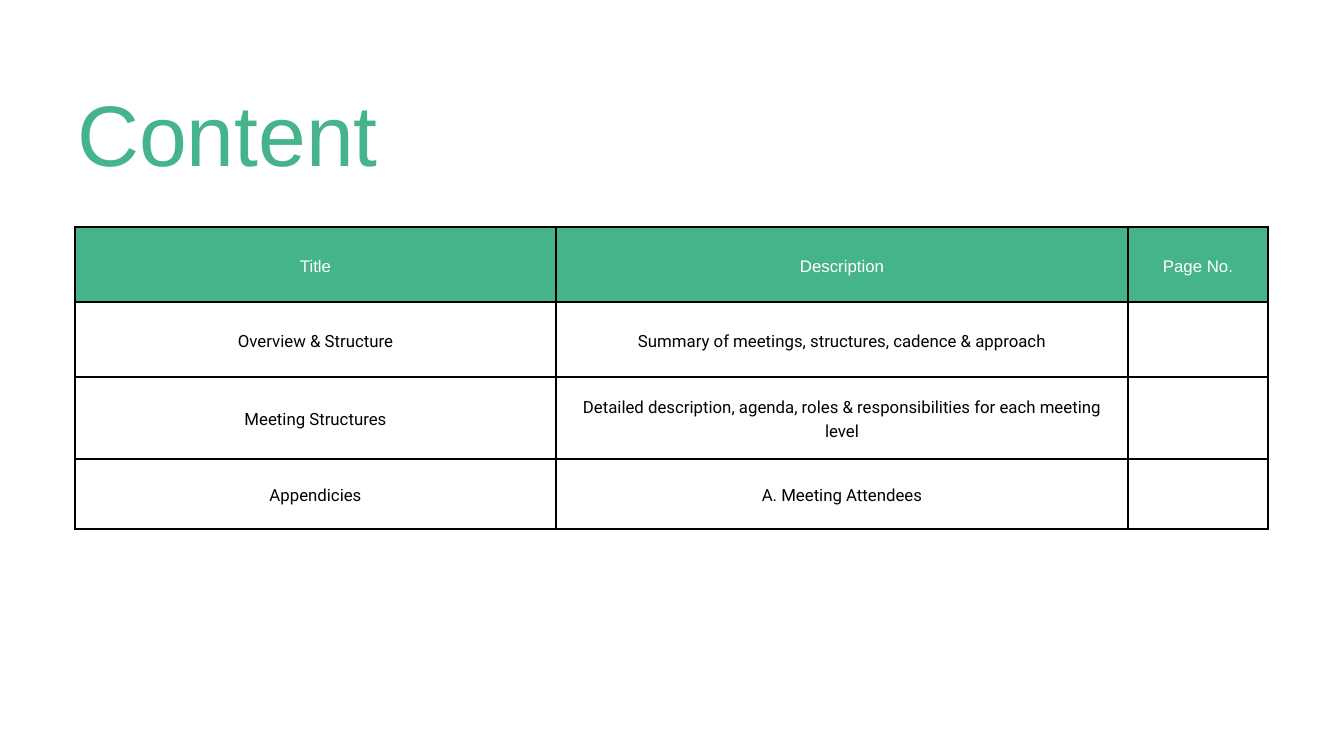
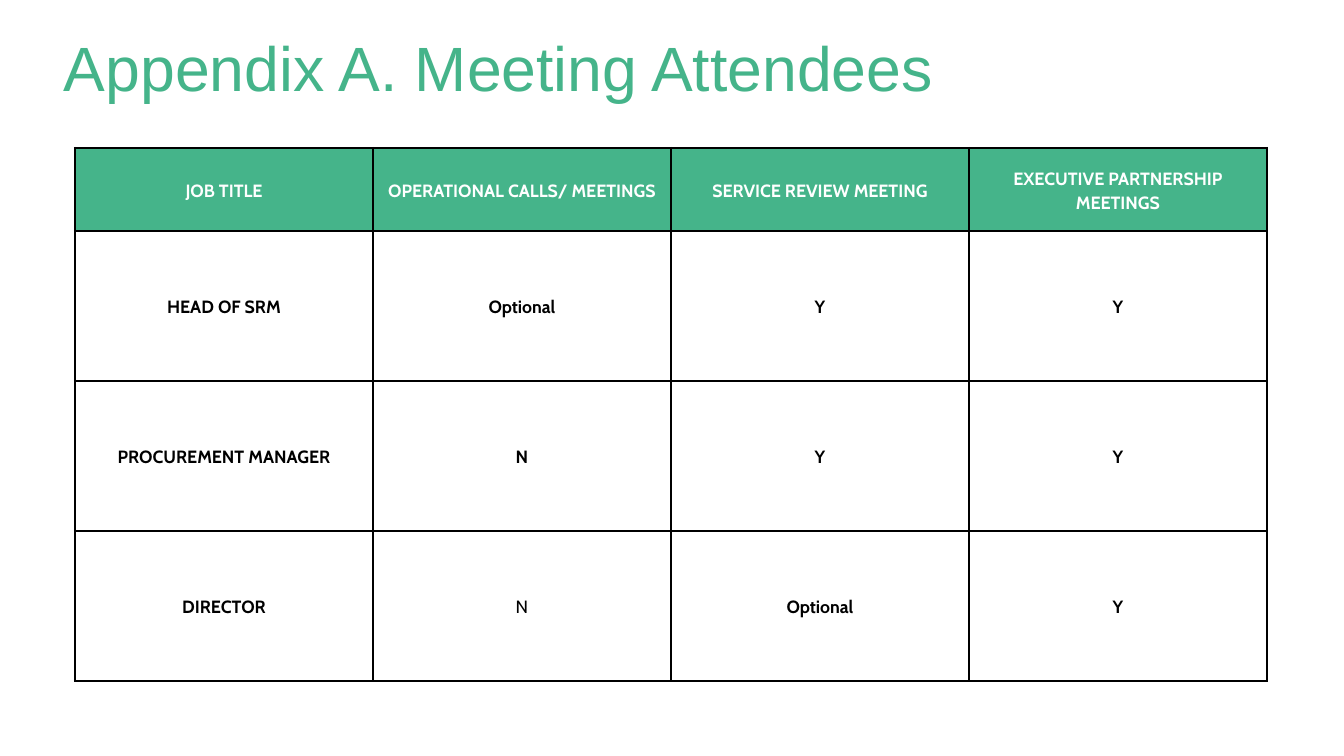
from lxml import etree
from pptx import Presentation
from pptx import util as u
from pptx.dml.color import RGBColor
from pptx.enum import text
from pptx.oxml.ns import qn

PX = 914400 / 67.2
GREEN, WHITE, BLACK, INK = "45B48A", "FFFFFF", "000000", "010201"
BORDER_PT = 3
CELL_INSET = 14
LEFT = 75

CONTENT = [
    ["Title", "Description", "Page No."],
    ["Overview & Structure", "Summary of meetings, structures, cadence & approach", ""],
    ["Meeting Structures",
     "Detailed description, agenda, roles & responsibilities for each meeting level", ""],
    ["Appendicies", "A. Meeting Attendees", ""],
]
ATTENDEES = [
    ["JOB TITLE", "OPERATIONAL CALLS/ MEETINGS", "SERVICE REVIEW MEETING",
     "EXECUTIVE PARTNERSHIP MEETINGS"],
    ["HEAD OF SRM", "Optional", "Y", "Y"],
    ["PROCUREMENT MANAGER", "N", "Y", "Y"],
    ["DIRECTOR", "N", "Optional", "Y"],
]


def px(n):
    """Turn pixels into EMU."""
    return u.Emu(round(n * PX))


def rgb(color):
    """Turn a hex string into a colour."""
    return RGBColor.from_string(color)


def set_margins(box, size):
    """Give a cell or text frame the same margin on every side."""
    box.margin_left = box.margin_right = box.margin_top = box.margin_bottom = px(size)


def format_paragraph(p, font, size, color, bold=False, align=text.PP_ALIGN.CENTER):
    """Style a paragraph, with line spacing of 1.4 times the text size."""
    p.alignment = align
    p.line_spacing = u.Pt(round(size * 1.4, 1))
    for r in p.runs:
        r.font.name = font
        r.font.size = u.Pt(size)
        r.font.bold = bold
        r.font.color.rgb = rgb(color)


def add_title(s, wording, x, y, w, h, size, align):
    """Add a green slide title."""
    tf = s.shapes.add_textbox(px(x), px(y), px(w), px(h)).text_frame
    tf.word_wrap = True
    tf.auto_size = text.MSO_AUTO_SIZE.SHAPE_TO_FIT_TEXT
    set_margins(tf, 0)
    tf.text = wording
    format_paragraph(tf.paragraphs[0], "Arial", size, GREEN, align=align)


def set_borders(cell):
    """Draw a black line on each side of a cell."""
    tc_pr = cell._tc.get_or_add_tcPr()
    for side in ("a:lnL", "a:lnR", "a:lnT", "a:lnB"):
        ln = etree.SubElement(tc_pr, qn(side), w=str(u.Pt(BORDER_PT)))
        fill = etree.SubElement(ln, qn("a:solidFill"))
        etree.SubElement(fill, qn("a:srgbClr"), val=BLACK)


def add_grid(s, rows, y, widths, heights, size, head_font, body_font, body_color, bold):
    """Add a bordered table with a green header row and return it."""
    frame = s.shapes.add_table(len(rows), len(widths), px(LEFT), px(y),
                               px(sum(widths)), px(sum(heights)))
    table = frame.table
    table.horz_banding = False
    for col, width in zip(table.columns, widths):
        col.width = px(width)
    for i, (row, height) in enumerate(zip(rows, heights)):
        table.rows[i].height = px(height)
        for j, wording in enumerate(row):
            cell = table.cell(i, j)
            set_margins(cell, CELL_INSET)
            cell.vertical_anchor = text.MSO_ANCHOR.MIDDLE
            set_borders(cell)
            if i == 0:
                cell.fill.solid()
                cell.fill.fore_color.rgb = rgb(GREEN)
            else:
                cell.fill.background()
            cell.text_frame.text = wording
            font, color = (head_font, WHITE) if i == 0 else (body_font, body_color)
            format_paragraph(cell.text_frame.paragraphs[0], font, size, color, bold)
    return table


def add_slide(prs):
    """Add a blank slide with a white background."""
    s = prs.slides.add_slide(prs.slide_layouts[6])
    s.background.fill.solid()
    s.background.fill.fore_color.rgb = rgb(WHITE)
    return s


def content_slide(prs):
    """Build the content overview."""
    s = add_slide(prs)
    add_grid(s, CONTENT, 227, [481, 572, 140], [75, 75, 82, 70], 18,
             "Arial", "Roboto", INK, False)
    add_title(s, "Content", LEFT, 63, 305, 115, 92, text.PP_ALIGN.CENTER)


def attendees_slide(prs):
    """Build the appendix of meeting attendees."""
    s = add_slide(prs)
    table = add_grid(s, ATTENDEES, 148, [298] * 4, [83] + [150] * 3, 19,
                     "Cabin", "Cabin", BLACK, True)
    director_calls = table.cell(3, 1).text_frame.paragraphs[0]
    director_calls.runs[0].font.bold = False
    add_title(s, "Appendix A. Meeting Attendees", 64, 16, 1269, 83, 67, text.PP_ALIGN.LEFT)


def main():
    """Build and save the presentation."""
    prs = Presentation()
    prs.slide_width, prs.slide_height = px(1344), px(756)
    content_slide(prs)
    attendees_slide(prs)
    prs.save("out.pptx")


if __name__ == "__main__":
    main()
